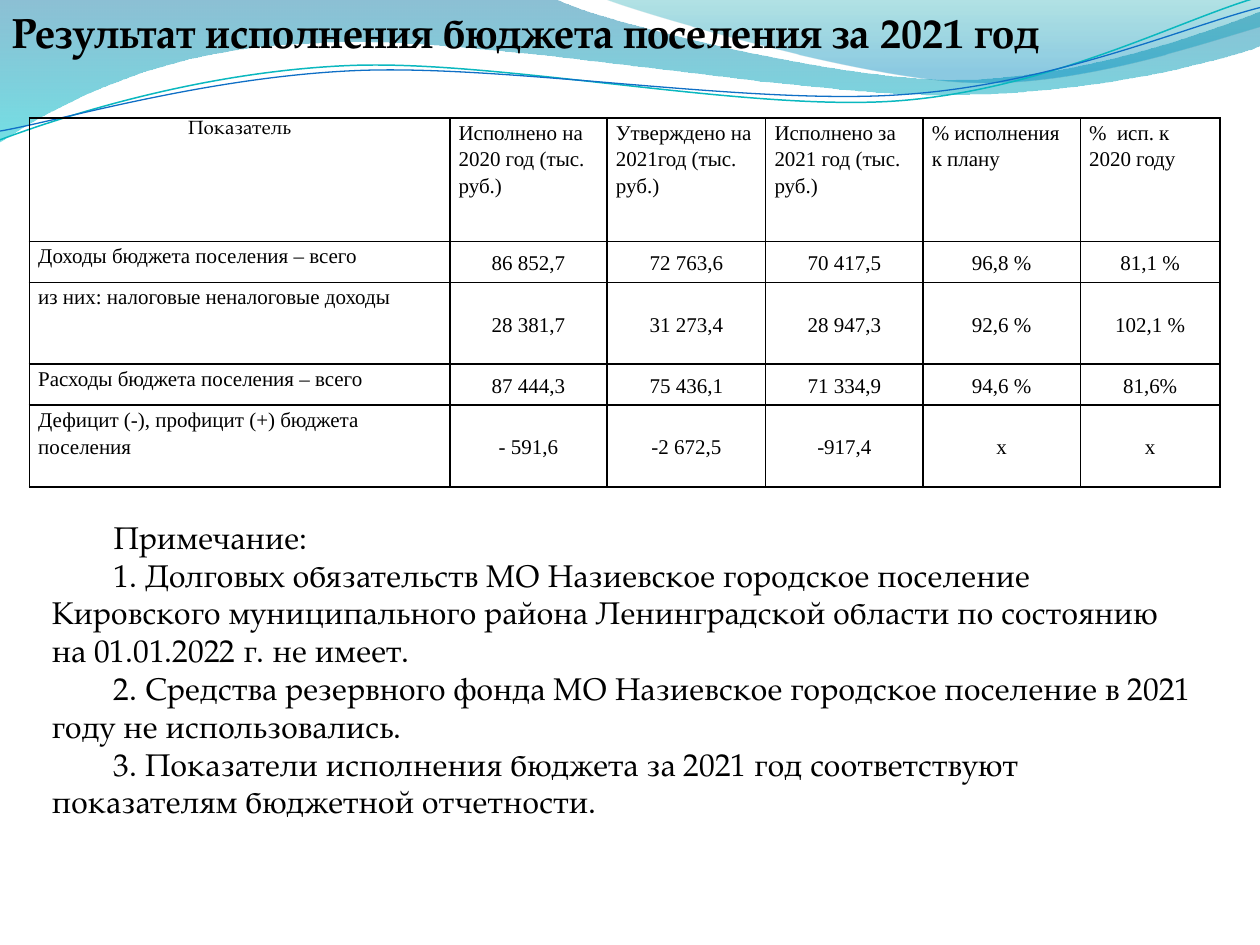
import math

from lxml import etree
from pptx import Presentation
from pptx import util as u
from pptx.dml.color import RGBColor
from pptx.enum import text
from pptx.oxml import parse_xml
from pptx.oxml.ns import nsdecls, qn

COLORS = {
    "ink": "000000",
    "wave_blue": "0074A1", "wave_cyan": "00C6CF",
    "crest_teal": "00A1A9", "crest_blue": "008BBF",
    "line_teal": "0AB8BF", "line_blue": "0F6FC6",
}
SERIF, TABLE_FONT = "TeX Gyre Pagella", "Times New Roman"
CENTER, LEFT = text.PP_ALIGN.CENTER, text.PP_ALIGN.LEFT

# The slide is a grid of 100 columns by 75 rows; boxes are left, top, width, height.
COLUMNS, ROWS = 100, 75
UNIT = u.Inches(10) // COLUMNS
HEADER_BOX = (0, 0, 100, 11.4)
TITLE_BOX = (0, 0, 100, 5)
TABLE_BOX = (2.34, 9.36, 94.5, 29.3)
NOTES_BOX = (3.13, 40.6, 93, 25.2)

COLUMN_SHARES = (33.4, 12.5, 12.6, 12.5, 12.5, 11.1)
ROW_SHARES = (9.8, 3.25, 6.5, 3.25, 6.5)
TABLE_ROWS = (
    ("Показатель", "Исполнено на 2020 год (тыс. руб.)", "Утверждено на 2021год (тыс. руб.)",
     "Исполнено за 2021 год (тыс. руб.)", "% исполнения к плану", "%  исп. к 2020 году"),
    ("Доходы бюджета поселения – всего", "86 852,7", "72 763,6", "70 417,5", "96,8 %", "81,1 %"),
    ("из них: налоговые неналоговые доходы",
     "28 381,7", "31 273,4", "28 947,3", "92,6 %", "102,1 %"),
    ("Расходы бюджета поселения – всего", "87 444,3", "75 436,1", "71 334,9", "94,6 %", "81,6%"),
    ("Дефицит (-), профицит (+) бюджета поселения",
     "- 591,6", "-2 672,5", "-917,4", "х", "х"),
)
NOTES = (
    "Примечание:",
    "1. Долговых обязательств МО Назиевское городское поселение Кировского муниципального "
    "района Ленинградской области по состоянию на 01.01.2022 г. не имеет.",
    "2. Средства резервного фонда МО Назиевское городское поселение в 2021 году "
    "не использовались.",
    "3. Показатели исполнения бюджета за 2021 год соответствуют показателям "
    "бюджетной отчетности.",
)

# Outlines: a start point, then pairs (straight corner) or sextets (Bezier curve).
WAVE = ((0, 0), (44, -0.1), (47.6, 1.7, 66.4, 6.3, 75.8, 6.3), (85.3, 6.3, 95.8, 2.6, 100, 0.9),
        (100.1, 3.6), (98.3, 4.4, 87, 7.6, 74.6, 7.5), (62.2, 7.5, 38.2, 2.8, 25.7, 3.4),
        (12.9, 3.6, 4.6, 8.3, -0.1, 11.3))
CREST = ((47.9, -0.1), (50.9, 1.1, 68.2, 6.2, 76.9, 6.5), (85.6, 6.9, 96.1, 3.2, 100, 2.1),
         (100, 0))
TEAL_LINE = ((0, 11.1), (4.8, 9.3, 15.8, 5.7, 27.7, 5.2), (39.5, 4.7, 59.3, 8.9, 71.3, 8),
             (83.3, 7.1, 93.8, 1.5, 99.8, -0.2))
BLUE_LINE = ((0, 10.4), (4.7, 9.6, 16.4, 6.1, 28.3, 5.6), (40.3, 5.1, 59.7, 8.4, 71.7, 7.5),
             (83.6, 6.7, 94.1, 2.1, 100, 0.6))
LINE_TILT = -2.7
TEAL_CENTER, BLUE_CENTER = (49.9, 5.75), (49.95, 5.9)


def color(name):
    return RGBColor.from_string(COLORS[name])


def grid(*lengths):
    return [u.Emu(round(length * UNIT)) for length in lengths]


def write(paragraph, words, font=SERIF, size=18, bold=False, align=LEFT,
          line_spacing=None, space_after=0, indent=0):
    paragraph.alignment = align
    paragraph.line_spacing = line_spacing
    paragraph.space_before, paragraph.space_after = u.Pt(0), u.Pt(space_after)
    if indent:
        properties = paragraph._p.get_or_add_pPr()
        properties.set("marL", "0")
        properties.set("indent", str(u.Inches(indent)))
    run = paragraph.add_run()
    run.text = words
    run.font.name, run.font.size, run.font.bold = font, u.Pt(size), bold
    run.font.color.rgb = color("ink")


def rotate(point, center, degrees):
    angle = math.radians(degrees)
    x, y = point[0] - center[0], point[1] - center[1]
    return (center[0] + x * math.cos(angle) - y * math.sin(angle),
            center[1] + x * math.sin(angle) + y * math.cos(angle))


def add_outline(slide, outline, box, closed, center=(0, 0), tilt=0):
    """Draw corners and Bezier curves; a tilted outline is stored level and then rotated."""
    left, top, _, _ = box
    points = [grid(*rotate((left + x, top + y), (left + center[0], top + center[1]), -tilt))
              for step in outline for x, y in zip(step[::2], step[1::2])]
    builder = slide.shapes.build_freeform(*points[0])
    builder.add_line_segments(points[1:], close=closed)
    shape = builder.convert_to_shape()
    shape.shadow.inherit = False
    shape.rotation = tilt
    segments = iter(list(shape.element.iter(qn("a:lnTo"))))
    for step in outline[1:]:
        segment = next(segments)
        if len(step) == 6:
            segment_curve = etree.Element(qn("a:cubicBezTo"))
            segment.addprevious(segment_curve)
            for control in (segment, next(segments), next(segments)):
                segment_curve.append(control[0])
                control.getparent().remove(control)
    return shape


def fill_downward(shape, stops):
    """Fill with a top-to-bottom gradient; a stop is position, colour name, opacity in %."""
    shape.line.fill.background()
    marks = "".join(
        f'<a:gs pos="{position * 1000}"><a:srgbClr val="{COLORS[name]}">'
        f'<a:alpha val="{opacity * 1000}"/></a:srgbClr></a:gs>'
        for position, name, opacity in stops)
    gradient = parse_xml(f'<a:gradFill {nsdecls("a")}><a:gsLst>{marks}</a:gsLst>'
                         '<a:lin ang="5400000" scaled="0"/></a:gradFill>')
    shape.element.spPr.find(qn("a:custGeom")).addnext(gradient)


def add_header_waves(slide, box):
    for outline, stops in (
            (WAVE, ((0, "wave_blue", 45), (100, "wave_cyan", 55))),
            (CREST, ((0, "crest_teal", 30), (80, "crest_blue", 45)))):
        fill_downward(add_outline(slide, outline, box, closed=True), stops)
    for outline, center, name, width in ((TEAL_LINE, TEAL_CENTER, "line_teal", 0.85),
                                         (BLUE_LINE, BLUE_CENTER, "line_blue", 0.75)):
        shape = add_outline(slide, outline, box, closed=False, center=center, tilt=LINE_TILT)
        shape.fill.background()
        shape.line.color.rgb, shape.line.width = color(name), u.Pt(width)


def place_title(slide, box):
    title = slide.shapes.title
    slide.shapes[-1].element.addnext(title.element)  # in front of the waves
    title.left, title.top, title.width, title.height = grid(*box)
    frame = title.text_frame
    frame.word_wrap, frame.vertical_anchor = True, text.MSO_ANCHOR.TOP
    frame.auto_size = text.MSO_AUTO_SIZE.SHAPE_TO_FIT_TEXT
    write(frame.paragraphs[0], "Результат исполнения бюджета поселения за 2021 год",
          size=24, bold=True)


def add_borders(cell):
    properties = cell._tc.get_or_add_tcPr()
    for position, side in enumerate(("lnL", "lnR", "lnT", "lnB")):
        line = etree.Element(qn(f"a:{side}"), w=str(u.Pt(1)))
        fill = etree.SubElement(line, qn("a:solidFill"))
        etree.SubElement(fill, qn("a:srgbClr"), val=COLORS["ink"])
        properties.insert(position, line)


def add_budget_table(slide, box):
    table = slide.shapes.add_table(len(ROW_SHARES), len(COLUMN_SHARES), *grid(*box)).table
    table.first_row = table.horz_banding = False
    for lines, shares, side, length in ((table.columns, COLUMN_SHARES, "width", box[2]),
                                        (table.rows, ROW_SHARES, "height", box[3])):
        for line, share in zip(lines, shares):
            setattr(line, side, grid(length * share / sum(shares))[0])
    for r, row in enumerate(TABLE_ROWS):
        for c, words in enumerate(row):
            cell = table.cell(r, c)
            is_value, is_corner = r > 0 and c > 0, r == c == 0
            is_last = (r, c) == (len(TABLE_ROWS) - 1, len(row) - 1)
            cell.fill.background()
            add_borders(cell)
            cell.margin_left = cell.margin_right = u.Inches(0 if is_last else 0.07)
            cell.margin_top = cell.margin_bottom = 0
            cell.vertical_anchor = text.MSO_ANCHOR.MIDDLE if is_value else text.MSO_ANCHOR.TOP
            write(cell.text_frame.paragraphs[0], words,
                  font=SERIF if is_corner else TABLE_FONT, size=11 if is_corner else 12,
                  align=CENTER if is_value or is_corner else LEFT, line_spacing=1.15,
                  space_after=0 if is_corner or is_last else 10)


def add_notes_text(slide, box):
    frame = slide.shapes.add_textbox(*grid(*box)).text_frame
    frame.word_wrap = True
    frame.auto_size = text.MSO_AUTO_SIZE.SHAPE_TO_FIT_TEXT
    for i, note in enumerate(NOTES):
        write(frame.add_paragraph() if i else frame.paragraphs[0], note, indent=0.49)


def main():
    presentation = Presentation()
    presentation.slide_width, presentation.slide_height = grid(COLUMNS, ROWS)
    slide = presentation.slides.add_slide(presentation.slide_layouts[5])
    add_header_waves(slide, HEADER_BOX)
    place_title(slide, TITLE_BOX)
    add_budget_table(slide, TABLE_BOX)
    add_notes_text(slide, NOTES_BOX)
    presentation.save("out.pptx")


if __name__ == "__main__":
    main()
